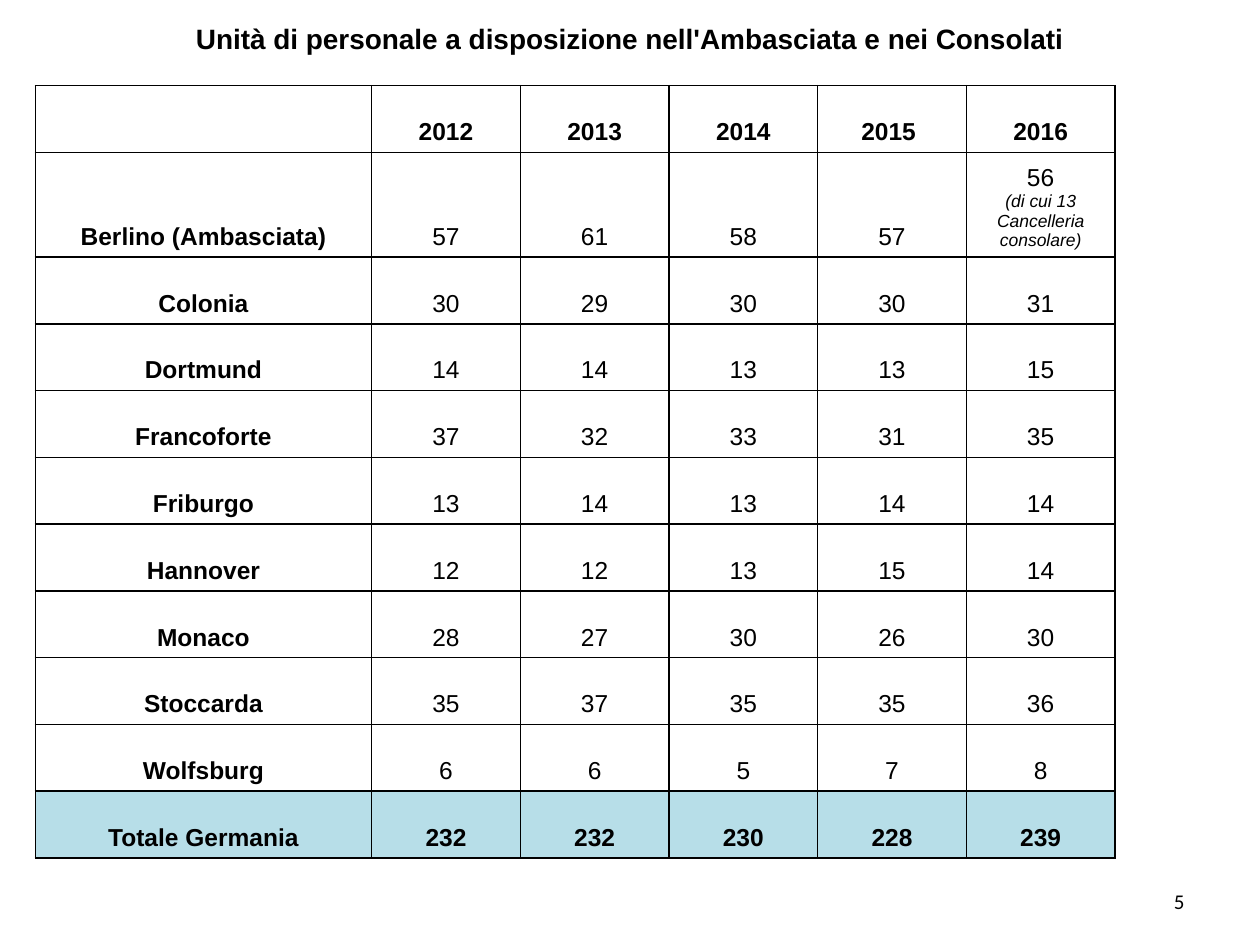
import dataclasses

import pptx
import pptx.dml.color
import pptx.enum.text
import pptx.oxml
import pptx.oxml.ns
import pptx.util

Inches = pptx.util.Inches
Pt = pptx.util.Pt
RGBColor = pptx.dml.color.RGBColor
PP_ALIGN = pptx.enum.text.PP_ALIGN
MSO_ANCHOR = pptx.enum.text.MSO_ANCHOR


@dataclasses.dataclass(frozen=True)
class Theme:
    font: str = "Arial"
    number_font: str = "Calibri"
    ink: str = "000000"
    total_fill: str = "B7DEE8"
    title_size: int = 16
    cell_size: int = 14
    note_size: int = 10
    number_size: int = 12
    border: int = 1


THEME = Theme()

TITLE = "Unità di personale a disposizione nell'Ambasciata e nei Consolati"
NOTE = "(di cui 13 Cancelleria consolare)"
STAFF = [
    ("", "2012", "2013", "2014", "2015 ", "2016"),
    ("Berlino (Ambasciata)", 57, 61, 58, 57, f"56\n{NOTE}"),
    ("Colonia", 30, 29, 30, 30, 31),
    ("Dortmund", 14, 14, 13, 13, 15),
    ("Francoforte", 37, 32, 33, 31, 35),
    ("Friburgo", 13, 14, 13, 14, 14),
    ("Hannover", 12, 12, 13, 15, 14),
    ("Monaco", 28, 27, 30, 26, 30),
    ("Stoccarda", 35, 37, 35, 35, 36),
    ("Wolfsburg", 6, 6, 5, 7, 8),
    ("Totale Germania", 232, 232, 230, 228, 239),
]
LABEL_WIDTH, YEAR_WIDTH = 2.67, 1.18
ROW_HEIGHT, EMBASSY_HEIGHT = 0.53, 0.83
EMBASSY_ROW = 1


def format_paragraph(p, size, align=PP_ALIGN.CENTER, font=THEME.font, bold=False, italic=False):
    p.alignment = align
    for r in p.runs:
        r.font.name = font
        r.font.size = Pt(size)
        r.font.bold = bold
        r.font.italic = italic
        r.font.color.rgb = RGBColor.from_string(THEME.ink)


def add_text(s, text, left, top, width, height, anchor, **style):
    box = s.shapes.add_textbox(Inches(left), Inches(top), Inches(width), Inches(height))
    tf = box.text_frame
    tf.word_wrap = True
    tf.vertical_anchor = anchor
    tf.text = text
    format_paragraph(tf.paragraphs[0], **style)


def add_borders(cell):
    tc_pr = cell._tc.get_or_add_tcPr()
    for side in ("lnL", "lnR", "lnT", "lnB"):
        tc_pr.append(pptx.oxml.parse_xml(
            f'<a:{side} {pptx.oxml.ns.nsdecls("a")} w="{Pt(THEME.border)}">'
            f'<a:solidFill><a:srgbClr val="{THEME.ink}"/></a:solidFill></a:{side}>'))


def fill_cell(cell, text, bold, is_total):
    cell.vertical_anchor = MSO_ANCHOR.BOTTOM
    add_borders(cell)
    if is_total:
        cell.fill.solid()
        cell.fill.fore_color.rgb = RGBColor.from_string(THEME.total_fill)
    else:
        cell.fill.background()
    tf = cell.text_frame
    tf.text = text
    for p in tf.paragraphs:
        is_note = p.text == NOTE
        size = THEME.note_size if is_note else THEME.cell_size
        format_paragraph(p, size, bold=bold, italic=is_note)


def add_staff_table(s, left, top):
    widths = [LABEL_WIDTH] + [YEAR_WIDTH] * (len(STAFF[0]) - 1)
    heights = [EMBASSY_HEIGHT if i == EMBASSY_ROW else ROW_HEIGHT for i in range(len(STAFF))]
    table = s.shapes.add_table(len(heights), len(widths), Inches(left), Inches(top),
                               Inches(sum(widths)), Inches(sum(heights))).table
    table.first_row = False
    table.horz_banding = False
    for column, width in zip(table.columns, widths):
        column.width = Inches(width)
    last = len(STAFF) - 1
    for i, values in enumerate(STAFF):
        table.rows[i].height = Inches(heights[i])
        for j, value in enumerate(values):
            bold = i in (0, last) or j == 0
            fill_cell(table.cell(i, j), str(value), bold, i == last)


def main():
    prs = pptx.Presentation()
    prs.slide_width = Inches(10)
    prs.slide_height = Inches(7.5)
    s = prs.slides.add_slide(prs.slide_layouts[6])
    add_staff_table(s, 0.28, 0.68)
    add_text(s, TITLE, 0.12, 0.12, 9.76, 0.37, MSO_ANCHOR.TOP,
             size=THEME.title_size, bold=True)
    add_text(s, "5", 7.17, 6.95, 2.33, 0.4, MSO_ANCHOR.MIDDLE,
             size=THEME.number_size, align=PP_ALIGN.RIGHT, font=THEME.number_font)
    prs.save("out.pptx")


if __name__ == "__main__":
    main()
